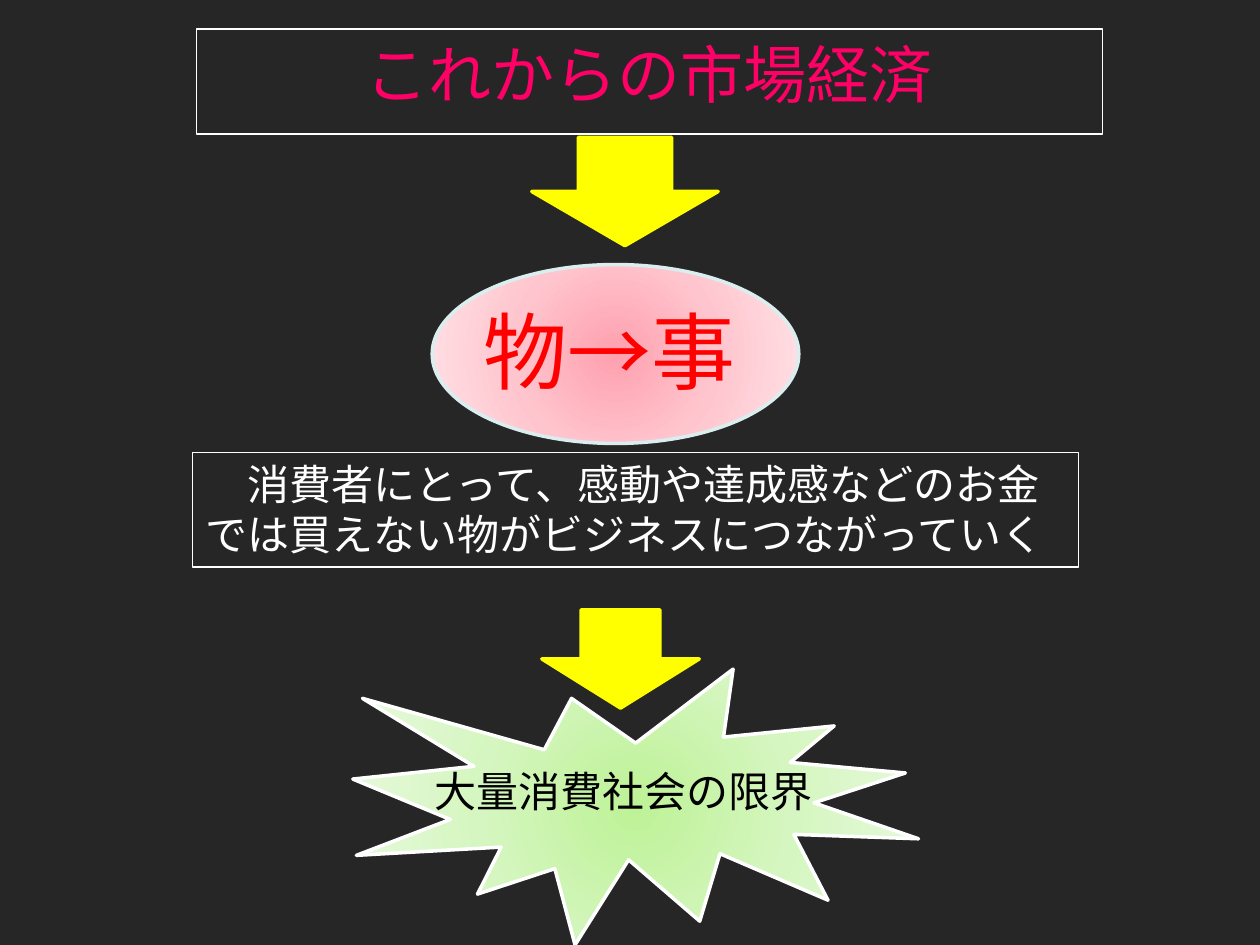
from typing import NamedTuple

from pptx import Presentation
from pptx.dml.color import RGBColor
from pptx.enum.shapes import MSO_SHAPE
from pptx.enum.text import MSO_ANCHOR, MSO_AUTO_SIZE, PP_ALIGN
from pptx.oxml import parse_xml
from pptx.oxml.ns import nsdecls, qn
from pptx.util import Inches, Pt

SLIDE_WIDTH, SLIDE_HEIGHT = Inches(10), Inches(7.5)
FONT = "Arial"

CHARCOAL = RGBColor(0x26, 0x26, 0x26)
WHITE = RGBColor(0xFF, 0xFF, 0xFF)
BLACK = RGBColor(0x00, 0x00, 0x00)
MAGENTA = RGBColor(0xFF, 0x00, 0x66)
RED = RGBColor(0xFF, 0x00, 0x00)
YELLOW = RGBColor(0xFF, 0xFF, 0x00)
ICE = RGBColor(0xDA, 0xED, 0xEF)
PINKS = (RGBColor(0xFF, 0xA0, 0xAF), RGBColor(0xFF, 0xC5, 0xCE), RGBColor(0xFF, 0xE3, 0xE7))
GREENS = (RGBColor(0xBE, 0xF2, 0x97), RGBColor(0xD5, 0xF6, 0xC0), RGBColor(0xEA, 0xFA, 0xE0))


class Box(NamedTuple):
    left: int
    top: int
    width: int
    height: int

    def percent(self, left, top, width, height):
        """Return the box at the given percentages of this one."""
        return Box(
            int(self.left + left * self.width / 100),
            int(self.top + top * self.height / 100),
            int(width * self.width / 100),
            int(height * self.height / 100),
        )


def set_line(shape, color, width):
    shape.line.color.rgb = color
    shape.line.width = Pt(width)


def fill_radial(shape, colors):
    """Blend the colours evenly from the centre to the rim."""
    step = 100000 // (len(colors) - 1)
    stops = "".join(
        f'<a:gs pos="{i * step}"><a:srgbClr val="{color}"/></a:gs>'
        for i, color in enumerate(colors)
    )
    shape.fill.gradient()
    properties = shape.element.spPr
    properties.replace(
        properties.find(qn("a:gradFill")),
        parse_xml(
            f'<a:gradFill {nsdecls("a")} rotWithShape="1"><a:gsLst>{stops}</a:gsLst>'
            '<a:path path="circle">'
            '<a:fillToRect l="50000" t="50000" r="50000" b="50000"/>'
            "</a:path></a:gradFill>"
        ),
    )


def write(shape, text, size, color, align=PP_ALIGN.LEFT):
    frame = shape.text_frame
    frame.word_wrap = True
    frame.auto_size = MSO_AUTO_SIZE.SHAPE_TO_FIT_TEXT
    frame.vertical_anchor = MSO_ANCHOR.TOP
    paragraph = frame.paragraphs[0]
    paragraph.alignment = align
    run = paragraph.add_run()
    run.text = text
    run.font.name = FONT
    run.font.size = Pt(size)
    run.font.color.rgb = color


def place_title(slide, box, text):
    title = slide.shapes.title
    title.left, title.top, title.width, title.height = box
    set_line(title, WHITE, 0.75)
    write(title, text, 36, MAGENTA, PP_ALIGN.CENTER)


def add_down_arrow(slide, box):
    arrow = slide.shapes.add_shape(MSO_SHAPE.DOWN_ARROW, *box)
    arrow.shadow.inherit = False
    arrow.fill.solid()
    arrow.fill.fore_color.rgb = YELLOW
    set_line(arrow, YELLOW, 2)


def add_emblem(slide, box, outline, colors, rim, label_box, text, size, color):
    """Add a glowing shape with its label laid over it."""
    emblem = slide.shapes.add_shape(outline, *box)
    emblem.shadow.inherit = False
    fill_radial(emblem, colors)
    set_line(emblem, rim, 2)
    write(slide.shapes.add_textbox(*label_box), text, size, color)


def add_explanation(slide, box, text):
    explanation = slide.shapes.add_shape(MSO_SHAPE.RECTANGLE, *box)
    explanation.shadow.inherit = False
    explanation.fill.background()
    set_line(explanation, WHITE, 0.75)
    write(explanation, text, 24, WHITE)


def build_market_slide(slide, page):
    slide.background.fill.solid()
    slide.background.fill.fore_color.rgb = CHARCOAL

    place_title(slide, page.percent(15.6, 3.07, 71.9, 9.47), "これからの市場経済")
    add_down_arrow(slide, page.percent(42.2, 14.53, 14.8, 11.47))

    shift = page.percent(34.3, 28, 29.1, 18.93)
    add_emblem(slide, shift, MSO_SHAPE.OVAL, PINKS, ICE,
               shift.percent(10.65, 16.2, 91.4, 64.1), "物→事", 48, RED)

    add_explanation(
        slide, page.percent(15.3, 47.87, 70.3, 12.13),
        "　消費者にとって、感動や達成感などのお金では買えない物がビジネスにつながっていく",
    )
    add_down_arrow(slide, page.percent(43, 64.53, 12.5, 10.4))

    limit = page.percent(28, 70.8, 44.9, 29.2)
    add_emblem(slide, limit, MSO_SHAPE.EXPLOSION1, GREENS, WHITE,
               limit.percent(12.25, 32.88, 108.69, 23.29), "大量消費社会の限界", 24, BLACK)


def main():
    presentation = Presentation()
    presentation.slide_width, presentation.slide_height = SLIDE_WIDTH, SLIDE_HEIGHT
    title_only = presentation.slide_layouts.get_by_name("Title Only")
    slide = presentation.slides.add_slide(title_only)
    build_market_slide(slide, Box(0, 0, SLIDE_WIDTH, SLIDE_HEIGHT))
    presentation.save("out.pptx")


if __name__ == "__main__":
    main()
